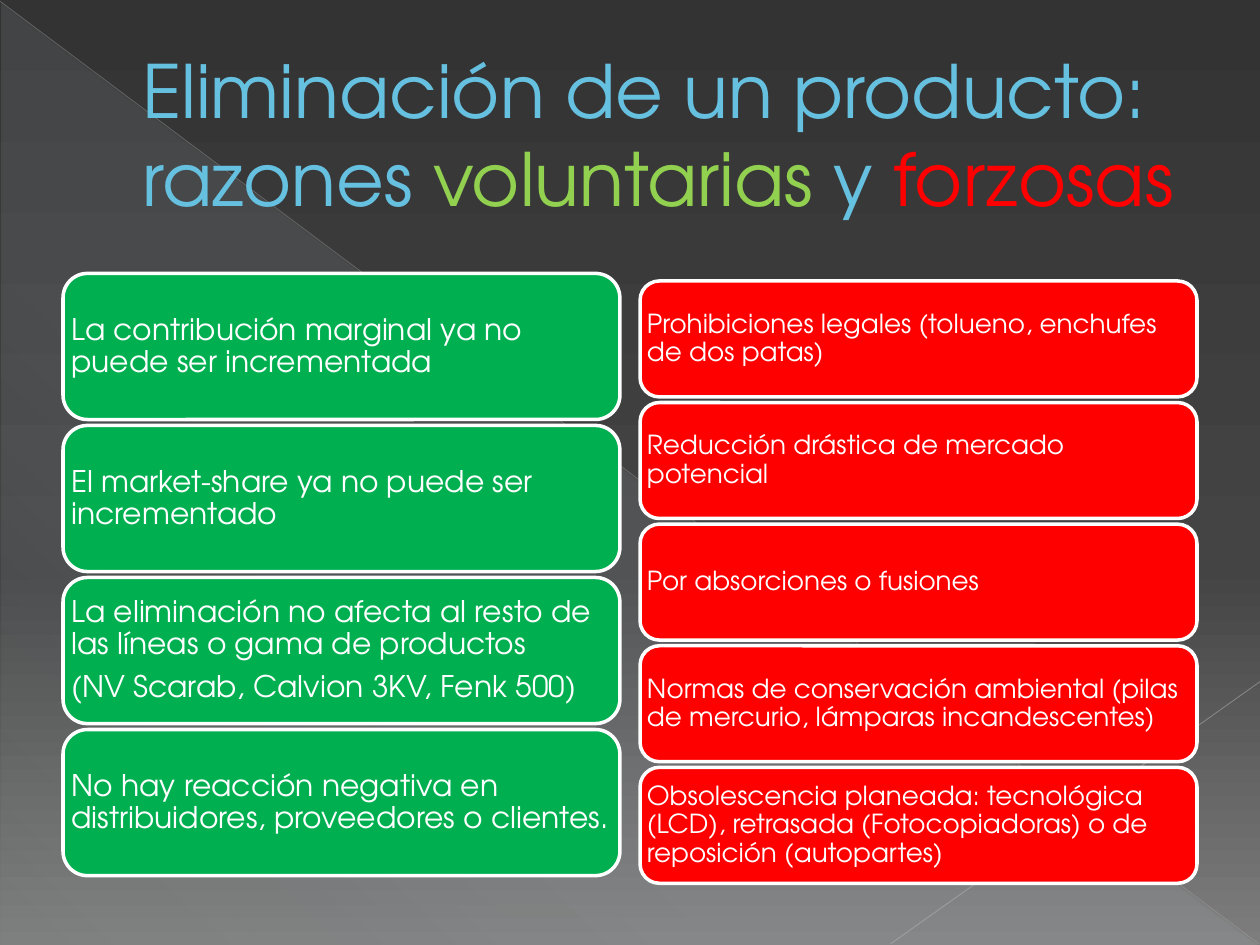
from lxml.etree import SubElement
from pptx import Presentation
from pptx.dml.color import RGBColor
from pptx.enum.shapes import MSO_CONNECTOR as CONN, MSO_SHAPE as SHAPE
from pptx.enum.text import MSO_ANCHOR as ANCHOR, PP_ALIGN as ALIGN
from pptx.oxml.ns import qn
from pptx.util import Inches, Pt

FONT = "TeX Gyre Adventor"
WHITE = RGBColor(0xFF, 0xFF, 0xFF)
BLUE = RGBColor(0x66, 0xC0, 0xE0)
LIME = RGBColor(0x92, 0xD0, 0x50)
GREEN = RGBColor(0x00, 0xB0, 0x50)
RED = RGBColor(0xFF, 0x00, 0x00)
GREY = RGBColor(0xB9, 0xB9, 0xB9)
LIGHT_GREY = RGBColor(0xC1, 0xC1, 0xC1)


def set_gradient(element, stops, angle):
    """Fill in the element's gradient; stops are (position, colour, opacity) in percent."""
    grad = next(element.iter(qn("a:gradFill")))
    for child in list(grad):
        grad.remove(child)
    gs_list = SubElement(grad, qn("a:gsLst"))
    for pos, color, opacity in stops:
        gs = SubElement(gs_list, qn("a:gs"), pos=str(pos * 1000))
        clr = SubElement(gs, qn("a:srgbClr"), val=color)
        if opacity < 100:
            SubElement(clr, qn("a:alpha"), val=str(opacity * 1000))
    SubElement(grad, qn("a:lin"), ang=str(angle * 60000), scaled="0")


def add_run(p, text, size, color):
    r = p.add_run()
    r.text = text
    r.font.name = FONT
    r.font.size = Pt(size)
    r.font.color.rgb = color


prs = Presentation()
prs.slide_width, prs.slide_height = Inches(10), Inches(7.5)
s = prs.slides.add_slide(prs.slide_layouts[6])

# Background
s.background.fill.gradient()
set_gradient(s.element, [(0, "333333", 100), (60, "444444", 100), (100, "7D7D7D", 100)], 90)

# Translucent triangle
sp = s.shapes.add_shape(SHAPE.RIGHT_TRIANGLE, Inches(0.01), Inches(0.02), Inches(9.98), Inches(7.48))
sp.shadow.inherit = False
sp.line.fill.background()
sp.fill.gradient()
set_gradient(sp.element, [(0, "DEF5FA", 10), (70, "DEF5FA", 8), (100, "DEF5FA", 1)], 133)

# Thin diagonal lines
for x1, y1, x2, y2, color, width, opacity in [
    (0, 0.01, 9.99, 7.49, GREY, 0.39, 35),
    (10, 5.41, 7.07, 7.49, LIGHT_GREY, 0.47, 45),
]:
    line = s.shapes.add_connector(CONN.STRAIGHT, Inches(x1), Inches(y1), Inches(x2), Inches(y2))
    line.line.color.rgb = color
    line.line.width = Pt(width)
    clr = next(line.element.spPr.iter(qn("a:srgbClr")))
    SubElement(clr, qn("a:alpha"), val=str(opacity * 1000))
    SubElement(line.element.spPr, qn("a:effectLst"))

# Title
tf = s.shapes.add_textbox(Inches(0.5), Inches(0.29), Inches(9), Inches(1.53)).text_frame
tf.word_wrap = True
tf.vertical_anchor = ANCHOR.MIDDLE
p = tf.paragraphs[0]
p._p.get_or_add_pPr().set("marL", str(Inches(0.53)))
for text, color in [
    ("Eliminación de un producto: razones ", BLUE),
    ("voluntarias", LIME),
    (" y ", BLUE),
    ("forzosas", RED),
]:
    add_run(p, text, 42, color)

# Columns of reasons: each box is a list of paragraphs
voluntary = [
    ["La contribución marginal ya no puede ser incrementada"],
    ["El market-share ya no puede ser incrementado"],
    ["La eliminación no afecta al resto de las líneas o gama de productos",
     "(NV Scarab, Calvion 3KV, Fenk 500)"],
    ["No hay reacción negativa en distribuidores, proveedores o clientes."],
]
forced = [
    ["Prohibiciones legales (tolueno, enchufes de dos patas)"],
    ["Reducción drástica de mercado potencial"],
    ["Por absorciones o fusiones"],
    ["Normas de conservación ambiental (pilas de mercurio, lámparas incandescentes)"],
    ["Obsolescencia planeada: tecnológica (LCD), retrasada (Fotocopiadoras) "
     "o de reposición (autopartes)"],
]
for reasons, left, first_top, last_top, height, color, size in [
    (voluntary, 0.5, 2.17, 5.79, 1.16, GREEN, 17),
    (forced, 5.08, 2.23, 6.09, 0.92, RED, 15),
]:
    pitch = (last_top - first_top) / (len(reasons) - 1)
    for i, paragraphs in enumerate(reasons):
        sp = s.shapes.add_shape(SHAPE.ROUNDED_RECTANGLE, Inches(left), Inches(first_top + i * pitch),
                                Inches(4.42), Inches(height))
        sp.shadow.inherit = False
        sp.fill.solid()
        sp.fill.fore_color.rgb = color
        sp.line.color.rgb = WHITE
        sp.line.width = Pt(2)
        tf = sp.text_frame
        tf.word_wrap = True
        tf.vertical_anchor = ANCHOR.MIDDLE
        # The rounded corners already inset the text
        tf.margin_left = tf.margin_right = tf.margin_top = tf.margin_bottom = Inches(0.01)
        for j, text in enumerate(paragraphs):
            p = tf.add_paragraph() if j else tf.paragraphs[0]
            p.alignment = ALIGN.LEFT
            p.line_spacing = 0.9
            p.space_after = Pt(6)
            add_run(p, text, size, WHITE)

prs.save("out.pptx")
